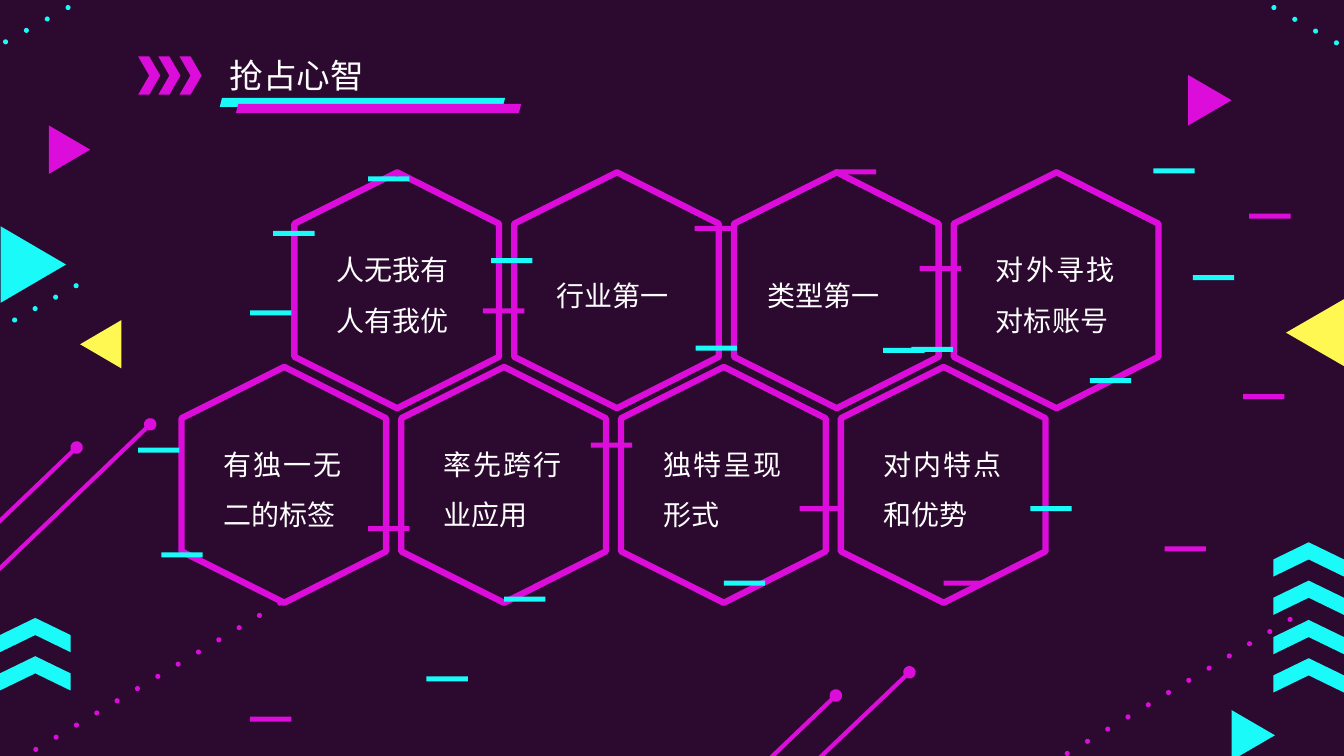
from dataclasses import dataclass

import pptx
import pptx.dml.color
import pptx.enum.shapes
import pptx.enum.text
import pptx.oxml
import pptx.oxml.ns
import pptx.shapes.autoshape
import pptx.slide
import pptx.util
from lxml import etree

RGBColor = pptx.dml.color.RGBColor
Inches = pptx.util.Inches
Shape = pptx.enum.shapes.MSO_SHAPE

PURPLE = RGBColor(0x2C, 0x0A, 0x2F)
MAGENTA = RGBColor(0xDC, 0x0D, 0xDA)
CYAN = RGBColor(0x1A, 0xFA, 0xF9)
YELLOW = RGBColor(0xFF, 0xF8, 0x52)
WHITE = RGBColor(0xFF, 0xFF, 0xFF)
FONT = "Noto Sans CJK SC"

HEXAGON_PITCH = 2.18
HEXAGON_OUTLINE = [(1.02, 0), (2.03, 0.51), (2.03, 1.83), (1.02, 2.34), (0, 1.83), (0, 0.51)]
DOT_SIZE = 0.05


@dataclass(frozen=True)
class Label:
    lines: tuple[str, ...]
    row_count: int = 2
    indent: float = 0.32


@dataclass(frozen=True)
class HexagonRow:
    left: float
    top: float
    labels: tuple[Label, ...]


@dataclass(frozen=True)
class Trail:
    first: tuple[float, float]
    last: tuple[float, float]
    count: int
    color: RGBColor


@dataclass(frozen=True)
class Block:
    kind: Shape
    left: float
    top: float
    width: float
    height: float
    color: RGBColor
    rotation: float = 0


@dataclass(frozen=True)
class Streak:
    start: tuple[float, float]
    end: tuple[float, float]


ROWS = [
    HexagonRow(1.8, 3.64, (
        Label(("有独一无二的标签",)),
        Label(("率先跨行业应用",)),
        Label(("独特呈现形式",)),
        Label(("对内特点和优势",)),
    )),
    HexagonRow(2.92, 1.71, (
        Label(("人无我有", "人有我优")),
        Label(("行业第一",), row_count=1),
        Label(("类型第一",), row_count=1, indent=0.23),
        Label(("对外寻找对标账号",)),
    )),
]

TRAILS = [
    Trail((0.12, 3.15), (0.73, 2.81), 4, CYAN),
    Trail((0.03, 0.39), (0.65, 0.05), 4, CYAN),
    Trail((12.61, 0.05), (13.23, 0.4), 4, CYAN),
    Trail((0.33, 7.41), (2.75, 5.96), 13, MAGENTA),
    Trail((10.56, 7.45), (12.77, 6.12), 12, MAGENTA),
]

TRIANGLES = [
    Block(Shape.ISOSCELES_TRIANGLE, -0.05, 2.3, 0.76, 0.65, CYAN, 90),
    Block(Shape.ISOSCELES_TRIANGLE, 12.71, 3.01, 0.67, 0.58, YELLOW, 270),
    Block(Shape.ISOSCELES_TRIANGLE, 12.18, 7.08, 0.5, 0.43, CYAN, 90),
    Block(Shape.ISOSCELES_TRIANGLE, 0.45, 1.28, 0.48, 0.41, MAGENTA, 90),
    Block(Shape.ISOSCELES_TRIANGLE, 11.75, 0.78, 0.5, 0.43, MAGENTA, 90),
    Block(Shape.ISOSCELES_TRIANGLE, 0.76, 3.21, 0.48, 0.41, YELLOW, 270),
]

SIDE_CHEVRONS = [
    Block(Shape.CHEVRON, left, top, 0.34, 0.7, CYAN, 270)
    for left, tops in [(0.18, (6.33, 5.95)), (12.81, (6.35, 5.97, 5.58, 5.2))]
    for top in tops
]

TITLE_MARKS = [
    Block(Shape.CHEVRON, left, 0.56, 0.22, 0.38, MAGENTA) for left in (1.37, 1.57, 1.78)
] + [
    Block(Shape.PARALLELOGRAM, 2.18, 0.97, 2.83, 0.09, CYAN),
    Block(Shape.PARALLELOGRAM, 2.34, 1.03, 2.83, 0.09, MAGENTA),
]

STREAKS = [
    Streak((-0.16, 5.32), (0.76, 4.44)),
    Streak((-0.18, 5.81), (1.49, 4.21)),
    Streak((7.37, 7.78), (8.29, 6.9)),
    Streak((7.35, 8.26), (9.02, 6.67)),
]

DASHES = {
    MAGENTA: [
        (12.33, 3.91), (11.55, 5.42), (12.39, 2.12), (2.48, 7.11), (9.36, 5.76),
        (7.93, 5.02), (5.86, 4.39), (3.65, 5.22), (4.79, 3.06), (6.89, 2.24),
        (8.28, 1.68), (9.12, 2.64),
    ],
    CYAN: [
        (11.44, 1.67), (11.83, 2.73), (4.23, 6.71), (2.71, 2.29), (3.65, 1.75),
        (2.48, 3.08), (1.37, 4.44), (1.6, 5.48), (5, 5.92), (7.18, 5.76),
        (4.87, 2.56), (6.9, 3.43), (8.76, 3.45), (9.04, 3.44), (10.81, 3.75),
        (10.22, 5.02),
    ],
}


def draw_block(page: pptx.slide.Slide, block: Block) -> None:
    shape = page.shapes.add_shape(
        block.kind, Inches(block.left), Inches(block.top), Inches(block.width), Inches(block.height)
    )
    shape.rotation = block.rotation
    shape.shadow.inherit = False
    shape.fill.solid()
    shape.fill.fore_color.rgb = block.color
    shape.line.fill.background()


def draw_trail(page: pptx.slide.Slide, trail: Trail) -> None:
    for index in range(trail.count):
        share = index / (trail.count - 1)
        left, top = (a + (b - a) * share for a, b in zip(trail.first, trail.last))
        draw_block(page, Block(Shape.OVAL, left, top, DOT_SIZE, DOT_SIZE, trail.color))


def draw_streak(page: pptx.slide.Slide, streak: Streak) -> None:
    line = page.shapes.add_connector(
        pptx.enum.shapes.MSO_CONNECTOR.STRAIGHT, *map(Inches, streak.start + streak.end)
    )
    line.line.color.rgb = MAGENTA
    line.line.width = pptx.util.Pt(3)
    outline = line.line._get_or_add_ln()
    for end in ("a:headEnd", "a:tailEnd"):
        etree.SubElement(outline, pptx.oxml.ns.qn(end), type="oval")
    etree.SubElement(line._element.spPr, pptx.oxml.ns.qn("a:effectLst"))


def draw_hexagon(page: pptx.slide.Slide, left: float, top: float) -> None:
    points = [(Inches(left + x), Inches(top + y)) for x, y in HEXAGON_OUTLINE]
    builder = page.shapes.build_freeform(*points[0])
    builder.add_line_segments(points[1:], close=True)
    hexagon = builder.convert_to_shape()
    hexagon.shadow.inherit = False
    hexagon.fill.background()
    hexagon.line.color.rgb = MAGENTA
    hexagon.line.width = pptx.util.Pt(4.5)


def draw_text(page: pptx.slide.Slide, lines: tuple[str, ...], left: float, top: float,
              width: float, height: float, size: float, spacing: float) -> None:
    box = page.shapes.add_textbox(Inches(left), Inches(top), Inches(width), Inches(height))
    frame = box.text_frame
    frame.word_wrap = True
    frame.auto_size = pptx.enum.text.MSO_AUTO_SIZE.SHAPE_TO_FIT_TEXT
    frame.text = "\n".join(lines)
    for para in frame.paragraphs:
        para.alignment = pptx.enum.text.PP_ALIGN.JUSTIFY
        para.line_spacing = spacing
        for span in para.runs:
            span.font.size = pptx.util.Pt(size)
            span.font.name = FONT
            span.font.color.rgb = WHITE
            etree.SubElement(span.font._element, pptx.oxml.ns.qn("a:ea"), typeface=FONT)


def main() -> None:
    deck = pptx.Presentation()
    deck.slide_width, deck.slide_height = Inches(13.33), Inches(7.5)
    page = deck.slides.add_slide(deck.slide_layouts[6])
    page.background.fill.solid()
    page.background.fill.fore_color.rgb = PURPLE

    for row in ROWS:
        for column, label in enumerate(row.labels):
            left = row.left + column * HEXAGON_PITCH
            draw_hexagon(page, left, row.top)
            text_top, text_height = (0.58, 1.05) if label.row_count == 2 else (0.84, 0.55)
            draw_text(page, label.lines, left + label.indent, row.top + text_top,
                      1.37, text_height, 20, 1.5)
    for trail in TRAILS:
        draw_trail(page, trail)
    for streak in STREAKS:
        draw_streak(page, streak)
    draw_text(page, ("抢占心智",), 2.18, 0.5, 2.83, 0.5, 24, 1)
    for block in TRIANGLES + SIDE_CHEVRONS + TITLE_MARKS:
        draw_block(page, block)
    for color, places in DASHES.items():
        for left, top in places:
            draw_block(page, Block(Shape.RECTANGLE, left, top, 0.41, 0.05, color))
    deck.save("out.pptx")


if __name__ == "__main__":
    main()
